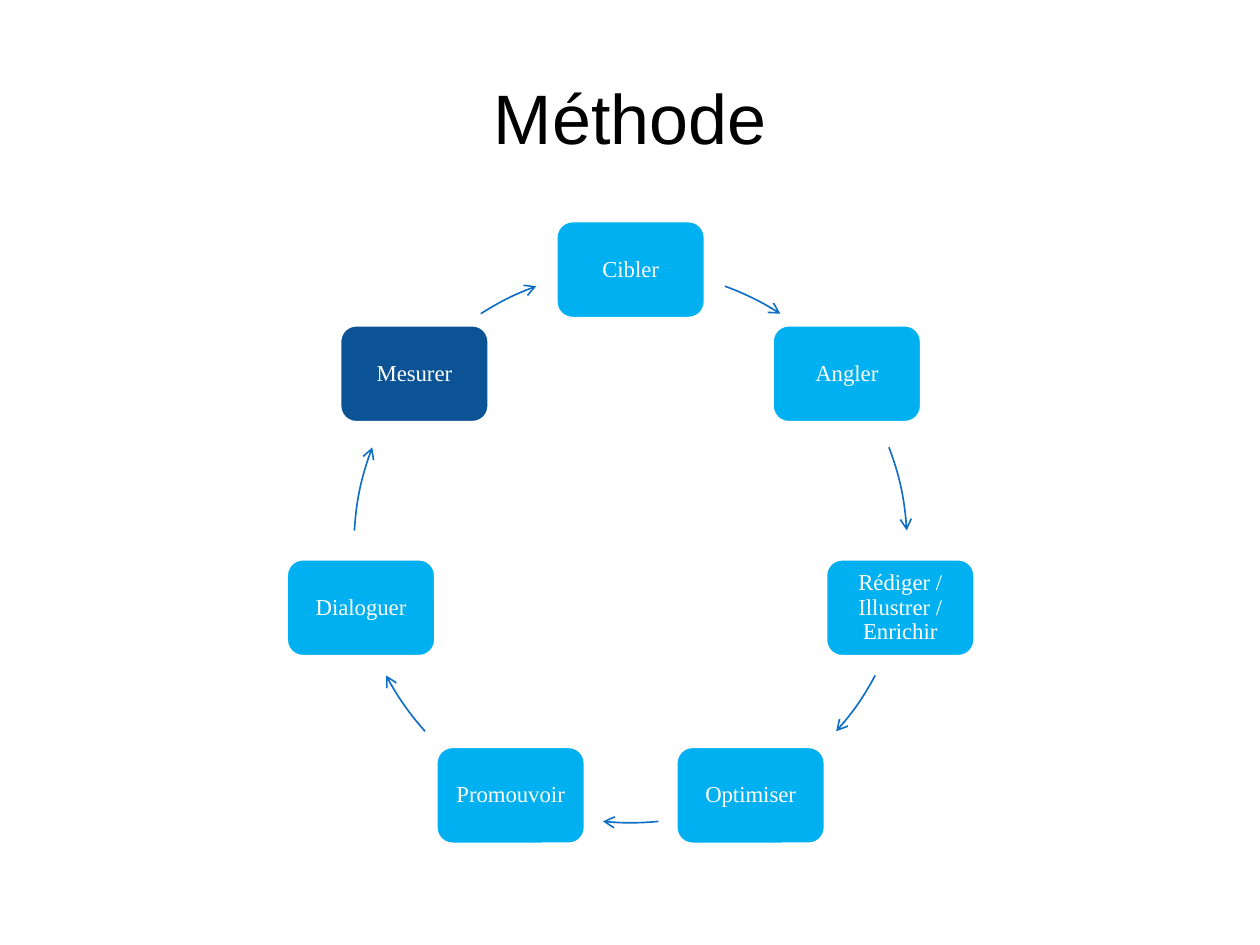
import math
from lxml import etree
from pptx import Presentation
from pptx import util as u
from pptx.dml.color import RGBColor
from pptx.enum import shapes, text
from pptx.oxml.ns import qn

HUES = {"sky": "00B0F0", "navy": "0B5394", "arrow": "0F6FC6",
        "white": "FFFFFF", "black": "000000"}
STEPS = [("Cibler", "sky"), ("Angler", "sky"),
         ("Rédiger / Illustrer / Enrichir", "sky"), ("Optimiser", "sky"),
         ("Promouvoir", "sky"), ("Dialoguer", "sky"), ("Mesurer", "navy")]
# Start and end of each arrow, in degrees clockwise from the top
RIGHT = [(19.95, 32.8), (69.05, 86.75), (117.85, 132)]
ARCS = RIGHT + [(174.25, 185.75)] + [(360 - b, 360 - a) for a, b in RIGHT[::-1]]


def color(name):
    return RGBColor.from_string(HUES[name])


def write(frame, words, font, size, hue):
    frame.word_wrap = True
    frame.vertical_anchor = text.MSO_ANCHOR.MIDDLE
    para = frame.paragraphs[0]
    para.alignment = text.PP_ALIGN.CENTER
    run = para.add_run()
    run.text = words
    run.font.name = font
    run.font.size = u.Pt(size)
    run.font.color.rgb = color(hue)
    return para


def add_title(slide, left, top, width, height):
    box = slide.shapes.add_textbox(left, top, width, height)
    write(box.text_frame, "Méthode", "Arial", 40, "black")


def add_card(slide, left, top, width, height, words, hue):
    card = slide.shapes.add_shape(
        shapes.MSO_SHAPE.ROUNDED_RECTANGLE, left, top, width, height)
    card.shadow.inherit = False
    card.fill.solid()
    card.fill.fore_color.rgb = color(hue)
    card.line.color.rgb = color("white")
    card.line.width = u.Pt(1.5)
    frame = card.text_frame
    frame.margin_left = frame.margin_right = u.Inches(0.05)
    frame.margin_top = frame.margin_bottom = u.Inches(0.05)
    write(frame, words, "Times New Roman", 13, "white").line_spacing = 0.9


def add_arrow(slide, left, top, size, start, end):
    arc = slide.shapes.add_shape(shapes.MSO_SHAPE.ARC, left, top, size, size)
    # Arc angles run from the right-hand side, in 60000ths of a degree
    for i, angle in enumerate((start, end)):
        arc.adjustments[i] = (angle - 90) % 360 * 0.6
    arc.shadow.inherit = False
    arc.fill.background()
    arc.line.color.rgb = color("arrow")
    arc.line.width = u.Pt(0.94)
    line = arc.line._get_or_add_ln()
    etree.SubElement(line, qn("a:tailEnd"), type="arrow")


def add_cycle(slide, left, top, size):
    wide, high = u.Inches(1.18), u.Inches(0.77)
    half = size / 2
    for i, ((words, hue), (start, end)) in enumerate(zip(STEPS, ARCS)):
        turn = math.tau * i / len(STEPS)
        x = left + half + half * math.sin(turn)
        y = top + half - half * math.cos(turn)
        add_card(slide, int(x - wide / 2), int(y - high / 2), wide, high,
                 words, hue)
        add_arrow(slide, left, top, size, start, end)


def main():
    deck = Presentation()
    deck.slide_width, deck.slide_height = u.Inches(10), u.Inches(7.5)
    slide = deck.slides.add_slide(deck.slide_layouts[6])
    add_title(slide, u.Inches(0.5), u.Inches(0.3), u.Inches(9), u.Inches(1.25))
    add_cycle(slide, u.Inches(2.81), u.Inches(2.14), u.Inches(4.39))
    deck.save("out.pptx")


if __name__ == "__main__":
    main()
